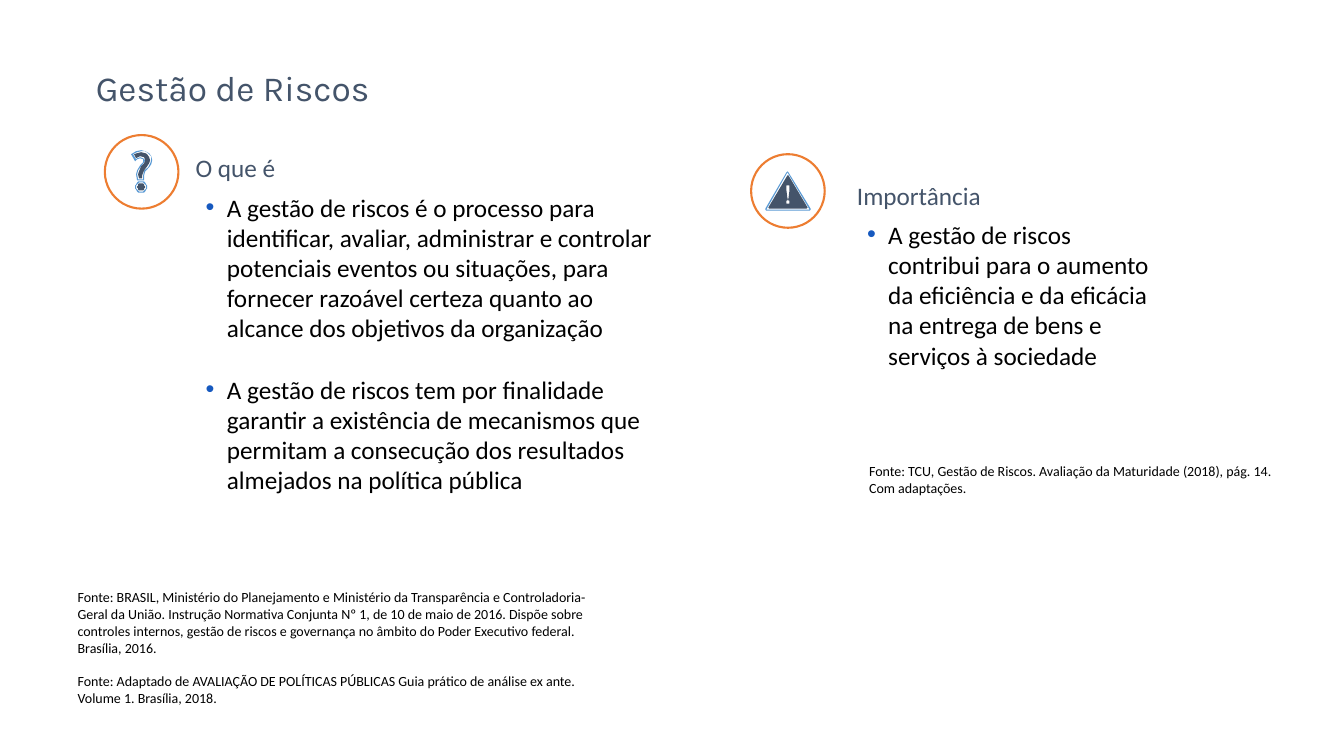
from math import cos, pi, sin

from lxml import etree
from pptx import Presentation
from pptx.dml.color import RGBColor
from pptx.enum.shapes import MSO_SHAPE
from pptx.enum.text import MSO_ANCHOR, MSO_AUTO_SIZE, PP_ALIGN
from pptx.oxml.ns import qn
from pptx.util import Inches, Pt

OVAL = MSO_SHAPE.OVAL
TOP, MIDDLE = MSO_ANCHOR.TOP, MSO_ANCHOR.MIDDLE
LEFT = PP_ALIGN.LEFT
FIXED = MSO_AUTO_SIZE.NONE

SLATE = RGBColor(0x44, 0x54, 0x6A)
BLUE = RGBColor(0x5B, 0x9B, 0xD5)
ORANGE = RGBColor(0xED, 0x7D, 0x31)
BLACK = RGBColor(0, 0, 0)
DOT = "1659BF"

deck = Presentation()
deck.slide_width, deck.slide_height = Inches(13.33), Inches(7.5)
slide = deck.slides.add_slide(deck.slide_layouts[5])
shapes = slide.shapes


def add_text(box, lines, size, gap):
    """Fill a text box; each line is (text, colour, left margin, bullet)."""
    frame = shapes.add_textbox(*[Inches(n) for n in box]).text_frame
    frame.word_wrap = True
    frame.vertical_anchor = TOP
    frame.margin_left = frame.margin_right = 0
    frame.margin_top = frame.margin_bottom = 0
    for i, (text, color, margin, bullet) in enumerate(lines):
        para = frame.paragraphs[0] if i == 0 else frame.add_paragraph()
        para.text = text
        props = para._p.get_or_add_pPr()
        props.set("marL", str(Inches(margin)))
        if bullet:
            props.set("indent", str(Inches(-0.21)))
            tint = etree.SubElement(props, qn("a:buClr"))
            etree.SubElement(tint, qn("a:srgbClr"), val=DOT)
            etree.SubElement(props, qn("a:buFont"), typeface="Arial")
            etree.SubElement(props, qn("a:buChar"), char="•")
        if color == SLATE:
            para.line_spacing = 0.9
            para.space_after = Pt(6)
        elif i > 0 and lines[i - 1][1] == BLACK:
            para.space_before = Pt(gap)
        font = para.runs[0].font
        font.name, font.size = "Calibri", Pt(size)
        font.color.rgb = color


def add_icon(rings, color):
    """Draw closed rings, given in hundredths of an inch, as one shape."""
    path = shapes.build_freeform(*rings[0][0], scale=Inches(0.01))
    path.add_line_segments(rings[0][1:], close=True)
    for ring in rings[1:]:
        path.move_to(*ring[0])
        path.add_line_segments(ring[1:], close=True)
    icon = path.convert_to_shape()
    icon.shadow.inherit = False
    icon.fill.solid()
    icon.fill.fore_color.rgb = color
    icon.line.fill.background()


# Title
title = shapes.title
title.left, title.top = Inches(0.85), Inches(0.68)
title.width, title.height = Inches(11.64), Inches(0.43)
frame = title.text_frame
frame.text = "Gestão de Riscos"
frame.auto_size = FIXED
frame.vertical_anchor = MIDDLE
head = frame.paragraphs[0]
head.alignment = LEFT
head.line_spacing = 0.9
font = head.runs[0].font
font.name, font.size = "Karla", Pt(25.2)
font.color.rgb = SLATE

# Two topics
add_text((1.94, 1.55, 4.62, 3.56), [
    ("O que é", SLATE, 0, False),
    ("A gestão de riscos é o processo para identificar, avaliar, "
     "administrar e controlar potenciais eventos ou situações, para "
     "fornecer razoável certeza quanto ao alcance dos objetivos da "
     "organização", BLACK, 0.31, True),
    ("A gestão de riscos tem por finalidade garantir a existência de "
     "mecanismos que permitam a consecução dos resultados almejados na "
     "política pública", BLACK, 0.31, True),
], 18, 22)
add_text((8.5, 1.82, 3.03, 1.87), [
    ("Importância", SLATE, 0, False),
    ("A gestão de riscos contribui para o aumento da eficiência e da "
     "eficácia na entrega de bens e serviços à sociedade",
     BLACK, 0.31, True),
], 18, 0)

# Circles around the icons
for left, top in ((1.04, 1.34), (7.45, 1.53)):
    circle = shapes.add_shape(OVAL, Inches(left), Inches(top),
                              Inches(0.73), Inches(0.73))
    circle.shadow.inherit = False
    circle.fill.background()
    circle.line.color.rgb = ORANGE
    circle.line.width = Pt(1.5)

# Question mark: blue rim, slate core
rim = [(140, 149), (135, 150), (130, 153), (134, 160), (136, 158),
       (139, 157), (142, 157.5), (142.5, 159), (142, 161), (139, 164),
       (136, 169), (135, 173), (136, 179), (143, 179), (143, 174),
       (144, 170), (148, 166), (150, 163), (151, 159), (150, 155),
       (148, 152), (144.5, 150)]
gap = [(140, 150), (144, 150.5), (147, 152), (149.5, 155), (150, 159),
       (149, 162), (147, 166), (143, 169), (142, 174), (142, 178),
       (137, 178), (136, 173), (137, 169), (140, 165), (143, 161),
       (143.5, 159), (142.5, 157), (139, 156), (136, 157), (135, 158),
       (132, 153), (135.5, 151)]
core = [(140, 151), (143.5, 151.5), (146, 153), (148.5, 156), (149, 159),
        (148, 162), (146, 165), (143, 169), (141.3, 174), (141, 177),
        (138, 177), (137, 173), (138, 170), (140, 165), (143, 162),
        (144, 159), (143, 156), (139, 155), (135, 157), (133, 153),
        (136, 151.5)]
turns = [2 * pi * i / 24 for i in range(24)]
big, mid, small = [[(140 + r * cos(a), 185.5 + r * sin(a)) for a in turns]
                   for r in (5.8, 4.7, 3.7)]
add_icon([rim, gap, big, mid], BLUE)
add_icon([core, small], SLATE)

# Warning sign: blue rim, slate core with a cut-out mark
add_icon([
    [(781, 170), (782, 171), (804, 207), (804, 208.5), (803, 209),
     (760, 209), (759, 208.5), (759, 207), (780, 171)],
    [(781.3, 171.3), (803, 208), (760, 208)],
], BLUE)
add_icon([
    [(781.5, 174), (782, 174.3), (800.7, 206), (800, 207), (763, 207),
     (762.3, 206), (781, 174.3)],
    [(780, 184), (783, 184), (783, 189), (782, 197), (781, 197),
     (780, 189)],
    [(781.5 + 1.9 * cos(a), 200.2 + 1.9 * sin(a)) for a in turns],
], SLATE)

# Sources
add_text((8.52, 4.59, 4.33, 0.5), [
    ("Fonte: TCU, Gestão de Riscos. Avaliação da Maturidade (2018), "
     "pág. 14. Com adaptações.", BLACK, 0.1, False),
], 10, 0)
add_text((0.67, 5.84, 5.3, 1.18), [
    ("Fonte: BRASIL, Ministério do Planejamento e Ministério da "
     "Transparência e Controladoria-Geral da União. Instrução Normativa "
     "Conjunta Nº 1, de 10 de maio de 2016. Dispõe sobre controles "
     "internos, gestão de riscos e governança no âmbito do Poder Executivo "
     "federal. Brasília, 2016.", BLACK, 0.1, False),
    ("Fonte: Adaptado de AVALIAÇÃO DE POLÍTICAS PÚBLICAS Guia prático de "
     "análise ex ante. Volume 1. Brasília, 2018.", BLACK, 0.1, False),
], 10, 12)

deck.save("out.pptx")
